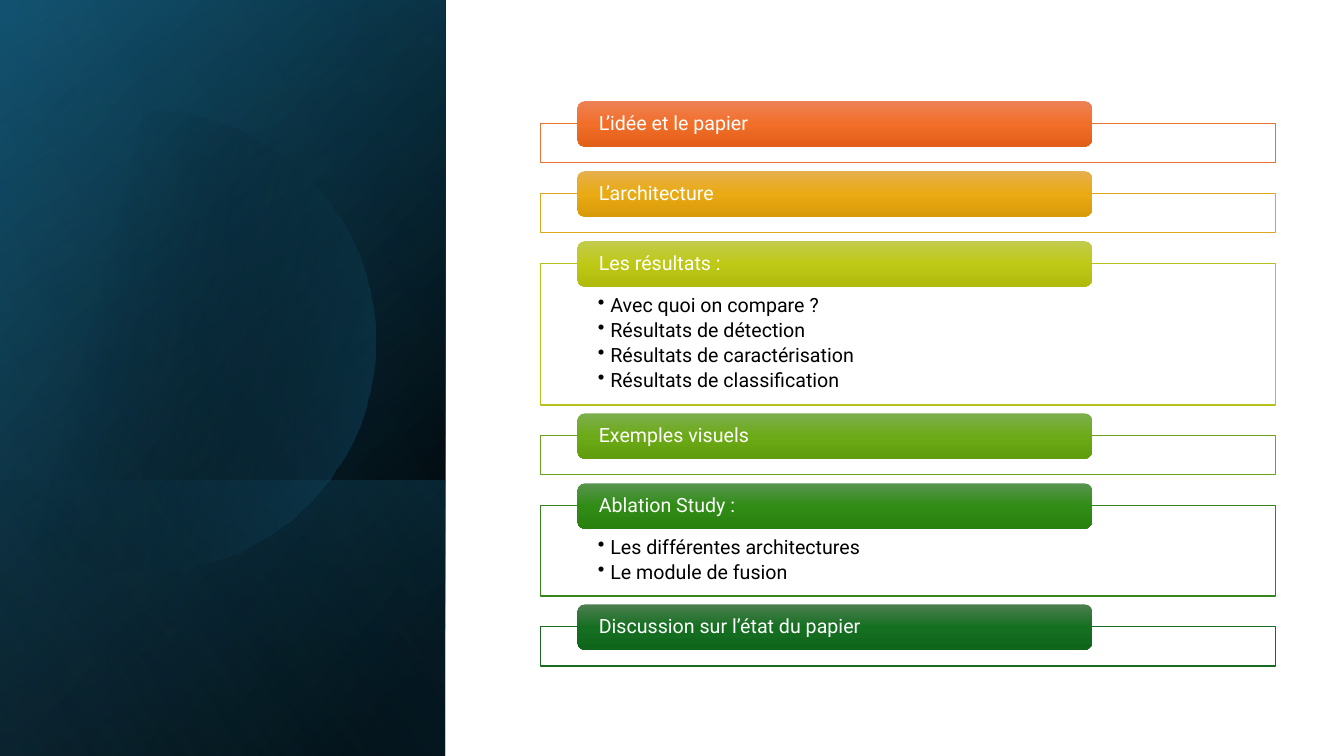
from math import acos, cos, sin

from pptx import Presentation
from pptx.dml.color import RGBColor
from pptx.enum.shapes import MSO_SHAPE as SHAPE
from pptx.enum.text import MSO_ANCHOR as ANCHOR, PP_ALIGN as ALIGN
from pptx.oxml import parse_xml
from pptx.oxml.ns import nsdecls
from pptx.util import Pt

WIDTH, HEIGHT = 960, 540
PANEL_W = 318
BOX_LEFT, BOX_W = 386, 525
PILL_LEFT, PILL_W, PILL_H = 412.5, 367.5, 32.5
PILL_RISE = 16
FIRST_TOP, GAP = 88.2, 22

SECTIONS = [
    ("L’idée et le papier", 28, "E97132", ("ED8257", "F26E29", "E25F1A"), []),
    ("L’architecture", 28, "E0A61D", ("E6B04E", "E9AA13", "D89A09"), []),
    ("Les résultats :", 101, "B7C11E", ("C2CB4E", "BEC916", "AFBA0C"),
     ["Avec quoi on compare ?", "Résultats de détection",
      "Résultats de caractérisation", "Résultats de classification"]),
    ("Exemples visuels", 28, "6BA31D", ("7DAF4E", "6CAA17", "619D0E"), []),
    ("Ablation Study :", 64.5, "34861C", ("57954E", "318C16", "29810F"),
     ["Les différentes architectures", "Le module de fusion"]),
    ("Discussion sur l’état du papier", 28, "196B24",
     ("4D7E50", "156F21", "0F661B"), []),
]


def rgb(value):
    return RGBColor.from_string(value)


def set_gradient(sp, stops, angle):
    marks = "".join(
        f'<a:gs pos="{pos * 1000}"><a:srgbClr val="{color}">'
        f'<a:alpha val="{alpha * 1000}"/></a:srgbClr></a:gs>'
        for pos, color, alpha in stops)
    grad = parse_xml(
        f'<a:gradFill {nsdecls("a")} rotWithShape="1"><a:gsLst>{marks}</a:gsLst>'
        f'<a:lin ang="{angle * 60000}" scaled="0"/></a:gradFill>')
    sp.fill.background()
    spPr = sp._element.spPr
    spPr.replace(spPr.find("{*}noFill"), grad)


def add_box(slide, kind, left, top, width, height):
    sp = slide.shapes.add_shape(kind, Pt(left), Pt(top), Pt(width), Pt(height))
    sp.shadow.inherit = False
    sp.line.fill.background()
    return sp


def add_shade(slide, top, height, stops, angle):
    left = (PANEL_W - height) / 2
    sp = add_box(slide, SHAPE.RECTANGLE, left, top + (height - PANEL_W) / 2,
                 height, PANEL_W)
    sp.rotation = 90
    sp._element.spPr.get_or_add_xfrm().set("flipH", "1")
    set_gradient(sp, stops, angle)


def add_disc(slide, cx, cy, radius, stops, angle):
    edge = acos(-cx / radius)
    steps = 120
    arc = [edge * (2 * i / steps - 1) for i in range(steps + 1)]
    points = [(cx + radius * cos(t), cy + radius * sin(t)) for t in arc]
    builder = slide.shapes.build_freeform(*points[0], scale=Pt(1))
    builder.add_line_segments(points[1:], close=True)
    sp = builder.convert_to_shape()
    sp.shadow.inherit = False
    sp.line.fill.background()
    set_gradient(sp, stops, angle)


def set_frame(sp, anchor, left, top, right, bottom):
    tf = sp.text_frame
    tf.word_wrap = True
    tf.vertical_anchor = anchor
    tf.margin_left, tf.margin_right = Pt(left), Pt(right)
    tf.margin_top, tf.margin_bottom = Pt(top), Pt(bottom)
    return tf


def add_run(p, text, color):
    p.alignment = ALIGN.LEFT
    p.line_spacing = 0.9
    r = p.add_run()
    r.text = text
    r.font.name = "Roboto"
    r.font.size = Pt(14)
    r.font.color.rgb = rgb(color)


def set_bullet(p):
    pPr = p._p.get_or_add_pPr()
    pPr.set("marL", str(Pt(9)))
    pPr.set("indent", str(Pt(-9)))
    pPr.append(parse_xml(f'<a:buChar {nsdecls("a")} char="•"/>'))


def add_section(slide, top, title, height, line, colors, items):
    box = add_box(slide, SHAPE.RECTANGLE, BOX_LEFT, top, BOX_W, height)
    box.fill.solid()
    box.fill.fore_color.rgb = rgb("FFFFFF")
    box.line.color.rgb = rgb(line)
    box.line.width = Pt(1)
    tf = set_frame(box, ANCHOR.TOP, 41, 23, 41, 8)
    for i, item in enumerate(items):
        p = tf.add_paragraph() if i else tf.paragraphs[0]
        add_run(p, item, "000000")
        p.space_after = Pt(2.6)
        set_bullet(p)

    pill = add_box(slide, SHAPE.ROUNDED_RECTANGLE, PILL_LEFT, top - PILL_RISE,
                   PILL_W, PILL_H)
    set_gradient(pill, [(pos, c, 100) for pos, c in zip((0, 50, 100), colors)], 90)
    tf = set_frame(pill, ANCHOR.MIDDLE, 13.7, 0, 13.7, 0)
    add_run(tf.paragraphs[0], title, "FFFFFF")


def main():
    prs = Presentation()
    prs.slide_width, prs.slide_height = Pt(WIDTH), Pt(HEIGHT)
    slide = prs.slides.add_slide(prs.slide_layouts[6])

    add_shade(slide, 0, HEIGHT, [(8, "000000", 100), (100, "104862", 100)], 50)
    add_shade(slide, 0, HEIGHT, [(0, "000000", 0), (99, "156082", 46)], 30)
    add_shade(slide, 343, 197, [(2, "156082", 29), (100, "000000", 30)], 130)
    add_disc(slide, 103, 243.5, 165, [(29, "000000", 0), (100, "156082", 43)], 14)
    add_shade(slide, 0, HEIGHT, [(0, "000000", 0), (99, "46B1E1", 11)], 120)

    top = FIRST_TOP
    for title, height, line, colors, items in SECTIONS:
        add_section(slide, top, title, height, line, colors, items)
        top += height + GAP

    prs.save("out.pptx")


if __name__ == "__main__":
    main()
